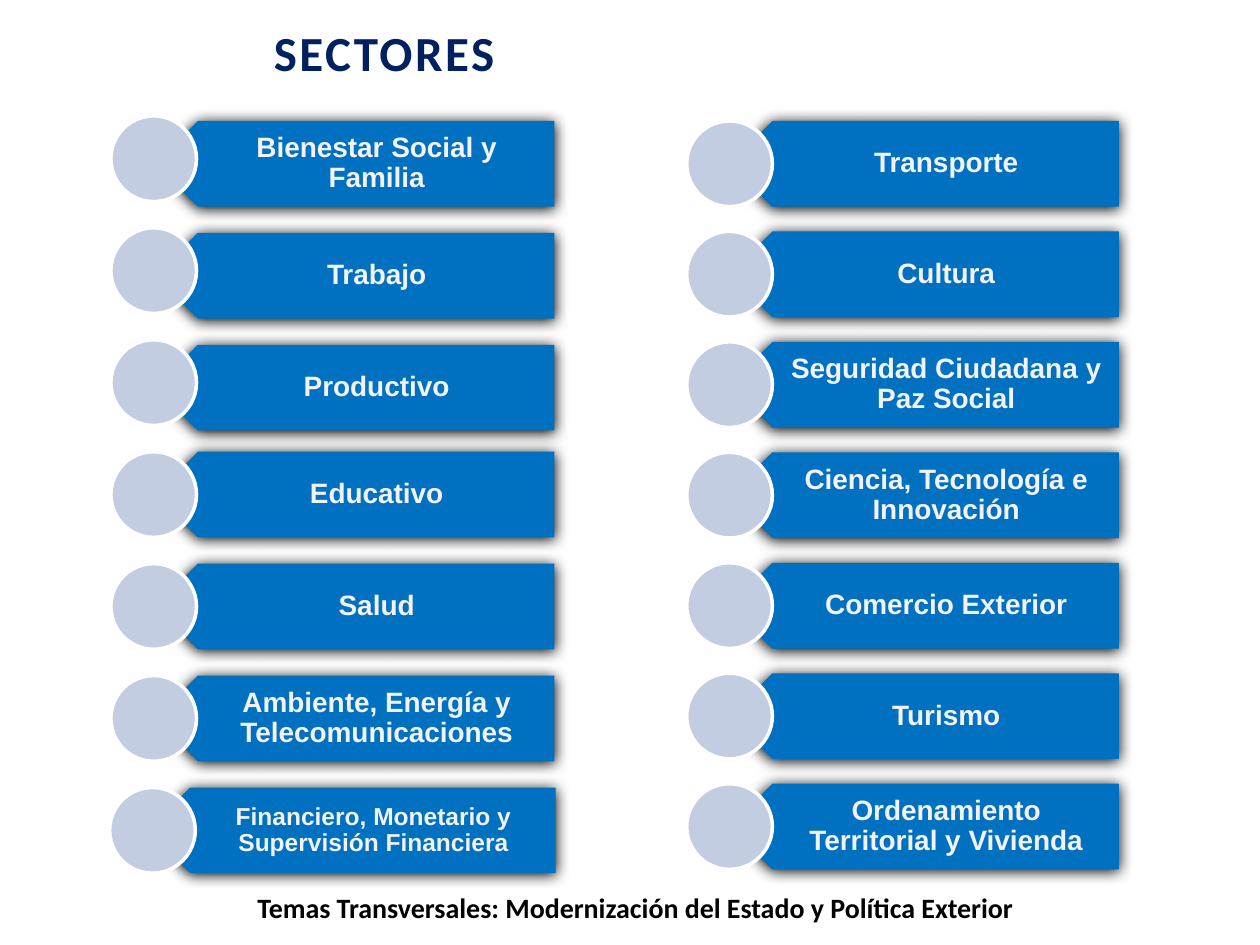
from dataclasses import dataclass

from lxml.etree import SubElement
from pptx import Presentation
from pptx.dml.color import RGBColor
from pptx.enum.shapes import MSO_SHAPE
from pptx.enum.text import MSO_ANCHOR, MSO_AUTO_SIZE, PP_ALIGN
from pptx.oxml.ns import qn
from pptx.util import Inches, Pt


@dataclass(frozen=True)
class Theme:
    title: str = "002060"
    plate: str = "0070C0"
    label: str = "F2F2F2"
    circle: str = "C2CDE1"
    outline: str = "FFFFFF"
    ink: str = "000000"
    heading_font: str = "Calibri"
    label_font: str = "Arial"
    title_size: int = 28
    body_size: int = 16
    small_size: int = 14


THEME = Theme()
ROW_H = 0.68
LEFT_SECTORS = [
    "Bienestar Social y Familia",
    "Trabajo",
    "Productivo",
    "Educativo",
    "Salud",
    "Ambiente, Energía y Telecomunicaciones",
    "Financiero, Monetario y Supervisión Financiera",
]
RIGHT_SECTORS = [
    "Transporte",
    "Cultura",
    "Seguridad Ciudadana y Paz Social",
    "Ciencia, Tecnología e Innovación",
    "Comercio Exterior",
    "Turismo",
    "Ordenamiento Territorial y Vivienda",
]


def add_text(shapes, text, box, *, size, color, font, insets=(0, 0, 0, 0),
             anchor=MSO_ANCHOR.MIDDLE, line_spacing=0.9, tracking=0, grow=False):
    s = shapes.add_textbox(*map(Inches, box))
    tf = s.text_frame
    tf.word_wrap = True
    tf.auto_size = MSO_AUTO_SIZE.SHAPE_TO_FIT_TEXT if grow else MSO_AUTO_SIZE.NONE
    tf.vertical_anchor = anchor
    tf.margin_left, tf.margin_top, tf.margin_right, tf.margin_bottom = map(Inches, insets)
    p = tf.paragraphs[0]
    p.alignment = PP_ALIGN.CENTER
    p.line_spacing = line_spacing
    r = p.add_run()
    r.text = text
    r.font.size = Pt(size)
    r.font.name = font
    r.font.bold = True
    r.font.color.rgb = RGBColor.from_string(color)
    if tracking:
        r.font._element.set("spc", str(int(tracking * 100)))


def add_filled(shapes, kind, box, color):
    s = shapes.add_shape(kind, *map(Inches, box))
    s.shadow.inherit = False
    s.fill.solid()
    s.fill.fore_color.rgb = RGBColor.from_string(color)
    s.line.fill.background()
    return s


def add_shadow(s):
    effects = s._element.spPr.find(qn("a:effectLst"))
    shadow = SubElement(effects, qn("a:outerShdw"), blurRad=str(Pt(8.5)),
                        dist=str(Pt(1)), dir="5400000", rotWithShape="0")
    SubElement(shadow, qn("a:srgbClr"), val=THEME.ink)


def add_sector(shapes, text, box, *, plate_dx, circle_dy=0, size=THEME.body_size):
    x, y, w, h = box
    plate_x, right = x + plate_dx, x + w
    plate = add_filled(shapes, MSO_SHAPE.PENTAGON, (plate_x, y, right - plate_x, h), THEME.plate)
    plate.rotation = 180
    add_shadow(plate)
    label_x = plate_x + h / 4
    add_text(shapes, text, (label_x, y, right - label_x, h), size=size, color=THEME.label,
             font=THEME.label_font, insets=(0.3, 0.07, 0.12, 0.07))
    circle = add_filled(shapes, MSO_SHAPE.OVAL, (x, y + circle_dy, h, h), THEME.circle)
    circle.line.color.rgb = RGBColor.from_string(THEME.outline)
    circle.line.width = Pt(2)


def add_left_column(slide, box):
    x, y, w, h = box
    shapes = slide.shapes.add_group_shape().shapes
    pitch = (h - ROW_H) / (len(LEFT_SECTORS) - 1)
    last = len(LEFT_SECTORS) - 1
    for i, text in enumerate(LEFT_SECTORS):
        drop = 0.04 if i < 3 else 0
        row = (x, y + i * pitch + drop, w, ROW_H)
        if i == last:
            row = (x - 0.01, row[1], w + 0.02, ROW_H)
            add_sector(shapes, text, row, plate_dx=0.3, size=THEME.small_size)
        else:
            add_sector(shapes, text, row, plate_dx=0.35, circle_dy=-drop)


def add_right_column(slide, box):
    x, y, w, h = box
    shapes = slide.shapes.add_group_shape().shapes
    pitch = (h - ROW_H) / (len(RIGHT_SECTORS) - 1)
    for i, text in enumerate(RIGHT_SECTORS):
        add_sector(shapes, text, (x, y + i * pitch, w, ROW_H), plate_dx=0.34)


def add_title(slide, box):
    add_text(slide.shapes, "SECTORES", box, size=THEME.title_size, color=THEME.title,
             font=THEME.heading_font, insets=(0.1, 0.05, 0.35, 0.05),
             anchor=MSO_ANCHOR.TOP, line_spacing=1, tracking=1.5, grow=True)


def add_footer(slide, box):
    add_text(slide.shapes, "Temas Transversales: Modernización del Estado y Política Exterior",
             box, size=THEME.body_size, color=THEME.ink, font=THEME.heading_font)


def main():
    prs = Presentation()
    prs.slide_width, prs.slide_height = Inches(10), Inches(7.5)
    slide = prs.slides.add_slide(prs.slide_layouts[6])
    add_title(slide, (0.28, 0.13, 5.79, 0.57))
    add_footer(slide, (0.91, 7.1, 8.27, 0.24))
    add_left_column(slide, (0.88, 0.92, 3.52, 6.01))
    add_right_column(slide, (5.45, 0.96, 3.43, 5.94))
    prs.save("out.pptx")


if __name__ == "__main__":
    main()
